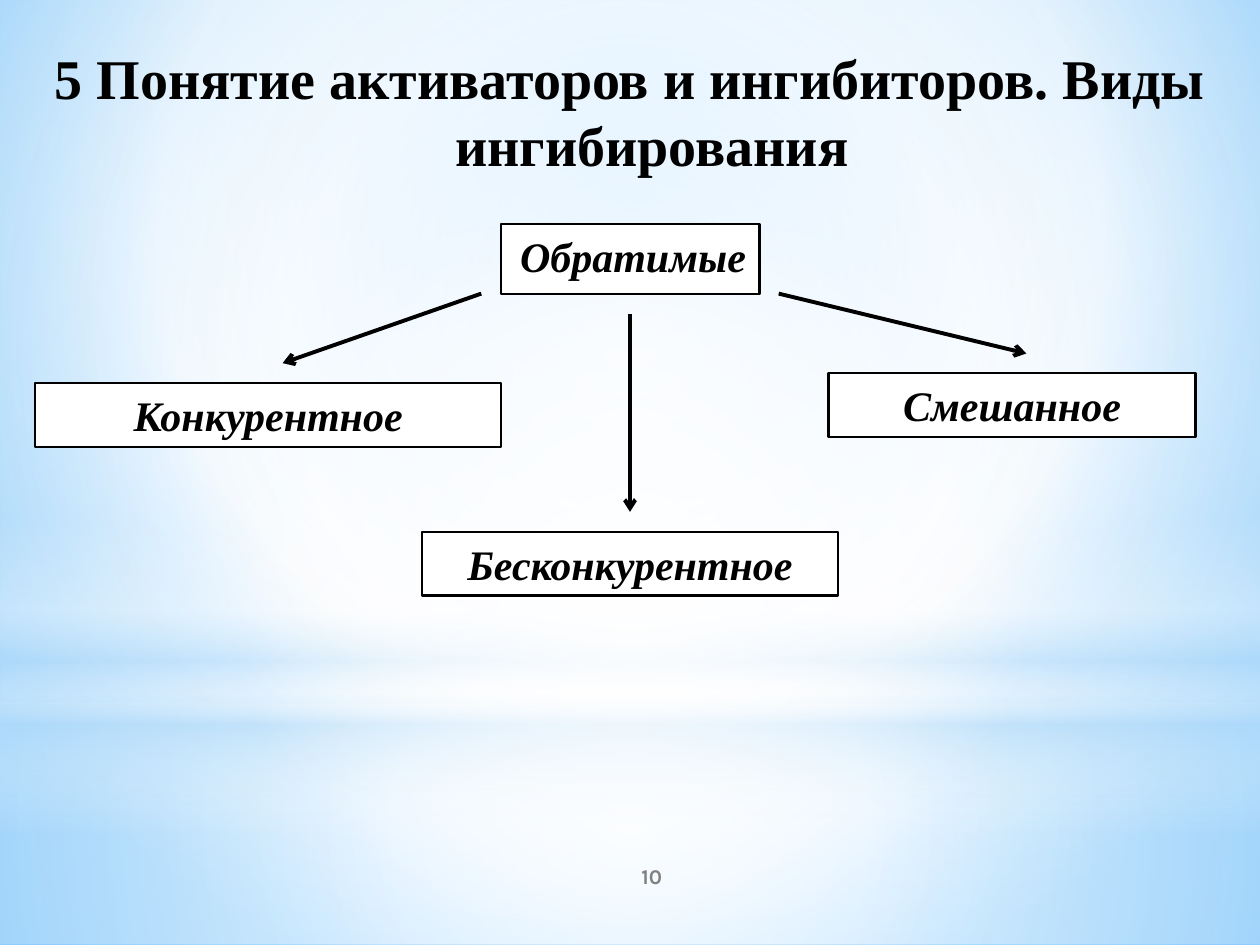
from lxml import etree
from pptx import Presentation
from pptx.dml.color import RGBColor
from pptx.enum.shapes import MSO_CONNECTOR, MSO_SHAPE
from pptx.enum.text import MSO_ANCHOR, PP_ALIGN
from pptx.oxml import parse_xml
from pptx.oxml.ns import nsdecls, qn
from pptx.util import Pt

RECT, OVAL = MSO_SHAPE.RECTANGLE, MSO_SHAPE.OVAL
STRAIGHT = MSO_CONNECTOR.STRAIGHT
LEFT, CENTER = PP_ALIGN.LEFT, PP_ALIGN.CENTER
TOP, MIDDLE = MSO_ANCHOR.TOP, MSO_ANCHOR.MIDDLE

# Content: lengths in points, boxes as left, top, width, height
WIDTH, HEIGHT = 720, 540
TITLE = "5 Понятие активаторов и ингибиторов. Виды ингибирования"
TITLE_BOX = (0, 21, 720, 90)
PAGE, PAGE_BOX = "10", (300.5, 486, 144, 28.8)

NODES = [  # text, box, alignment, left margin, first-line indent
    ("Обратимые", (286.5, 128.2, 147.5, 39.6), LEFT, 18, -14.4),
    ("Конкурентное", (20, 219, 266.5, 36.4), CENTER, 0, 0),
    ("Бесконкурентное", (241, 304, 238, 36.4), CENTER, 0, 0),
    ("Смешанное", (473.4, 213.2, 209.8, 36.4), CENTER, 0, 0),
]
ARROWS = [  # start x, y, end x, y
    (275, 167.8, 161.5, 207.5),
    (445, 167.8, 586.5, 202),
    (360, 179.5, 360, 292.5),
]

# Gradient stops: position %, colour, opacity %
BACKGROUND = [(0, "9ED5FF", 100), (60, "FFFFFF", 100), (100, "5BB9FF", 100)]
CENTRE = (50, 50, 50, 50)
GLOWS = [  # shape, box, stops, focus (None means top to bottom)
    (RECT, (0, 402, 720, 138),
     [(0, "FFFFFF", 91), (37, "FFFFFF", 76), (100, "B4DCFA", 79)], CENTRE),
    (RECT, (0, 0, 720, 402),
     [(0, "FFFFFF", 89), (48, "FFFFFF", 62), (100, "B4DCFA", 79)], CENTRE),
    (RECT, (0, 296.6, 720, 180),
     [(0, "FFFFFF", 0), (29, "FFFFFF", 30), (45, "B4DCFA", 40),
      (55, "FFFFFF", 26), (65, "B4DCFA", 60), (100, "FFFFFF", 0)], None),
    (OVAL, (0, 126, 720, 402),
     [(0, "FFFFFF", 100), (56, "FFFFFF", 0)], CENTRE),
]

TITLE_FONT = {"name": "Times New Roman", "size": Pt(32), "bold": True}
NODE_FONT = {"name": "Times New Roman", "size": Pt(24), "bold": True, "italic": True}
PAGE_FONT = {"name": "Karla", "size": Pt(12), "bold": True}


def color(hex_text):
    return RGBColor.from_string(hex_text)


def gradient(stops, focus):
    gs = "".join(
        f'<a:gs pos="{pos * 1000}"><a:srgbClr val="{rgb}">'
        f'<a:alpha val="{alpha * 1000}"/></a:srgbClr></a:gs>'
        for pos, rgb, alpha in stops)
    if focus:
        sides = " ".join(f'{side}="{v * 1000}"' for side, v in zip("ltrb", focus))
        way = f'<a:path path="circle"><a:fillToRect {sides}/></a:path>'
    else:
        way = '<a:lin ang="5400000" scaled="0"/>'
    return parse_xml(f'<a:gradFill {nsdecls("a")} rotWithShape="1">'
                     f'<a:gsLst>{gs}</a:gsLst>{way}</a:gradFill>')


def write(sp, text, font, rgb="000000", align=CENTER, anchor=TOP, margin=0, indent=0):
    tf = sp.text_frame
    tf.word_wrap = True
    tf.vertical_anchor = anchor
    p = tf.paragraphs[0]
    p.alignment = align
    pPr = p._p.get_or_add_pPr()
    pPr.set("marL", str(Pt(margin)))
    pPr.set("indent", str(Pt(indent)))
    r = p.add_run()
    r.text = text
    for key, value in font.items():
        setattr(r.font, key, value)
    r.font.color.rgb = color(rgb)


def add_shape(kind, box):
    sp = shapes.add_shape(kind, *map(Pt, box))
    sp.shadow.inherit = False
    return sp


prs = Presentation()
prs.slide_width, prs.slide_height = Pt(WIDTH), Pt(HEIGHT)
slide = prs.slides.add_slide(prs.slide_layouts[5])
shapes = slide.shapes

# Background and soft glows
fill = slide.background.fill
fill.solid()
bgPr = slide._element.cSld.bg.bgPr
bgPr.replace(bgPr[0], gradient(BACKGROUND, (20, 10, 20, 60)))
for kind, box, stops, focus in GLOWS:
    sp = add_shape(kind, box)
    sp.line.fill.background()
    sp.fill.solid()
    spPr = sp._element.spPr
    spPr.replace(spPr.find(qn("a:solidFill")), gradient(stops, focus))

# Title, brought in front of the glows
title = shapes.title
title.left, title.top, title.width, title.height = map(Pt, TITLE_BOX)
write(title, TITLE, TITLE_FONT, margin=25.2, indent=-25.2)
shapes._spTree.append(title._element)

# Boxes
for text, box, align, margin, indent in NODES:
    sp = add_shape(RECT, box)
    sp.fill.solid()
    sp.fill.fore_color.rgb = color("FFFFFF")
    sp.line.color.rgb = color("000000")
    sp.line.width = Pt(1.25)
    write(sp, text, NODE_FONT, align=align, margin=margin, indent=indent)

# Arrows
for ends in ARROWS:
    arrow = shapes.add_connector(STRAIGHT, *map(Pt, ends))
    arrow.line.color.rgb = color("000000")
    arrow.line.width = Pt(2.25)
    etree.SubElement(arrow.line._get_or_add_ln(), qn("a:tailEnd"), type="arrow")
    etree.SubElement(arrow._element.spPr, qn("a:effectLst"))

# Page number
write(shapes.add_textbox(*map(Pt, PAGE_BOX)), PAGE, PAGE_FONT, "808080", anchor=MIDDLE)

prs.save("out.pptx")
